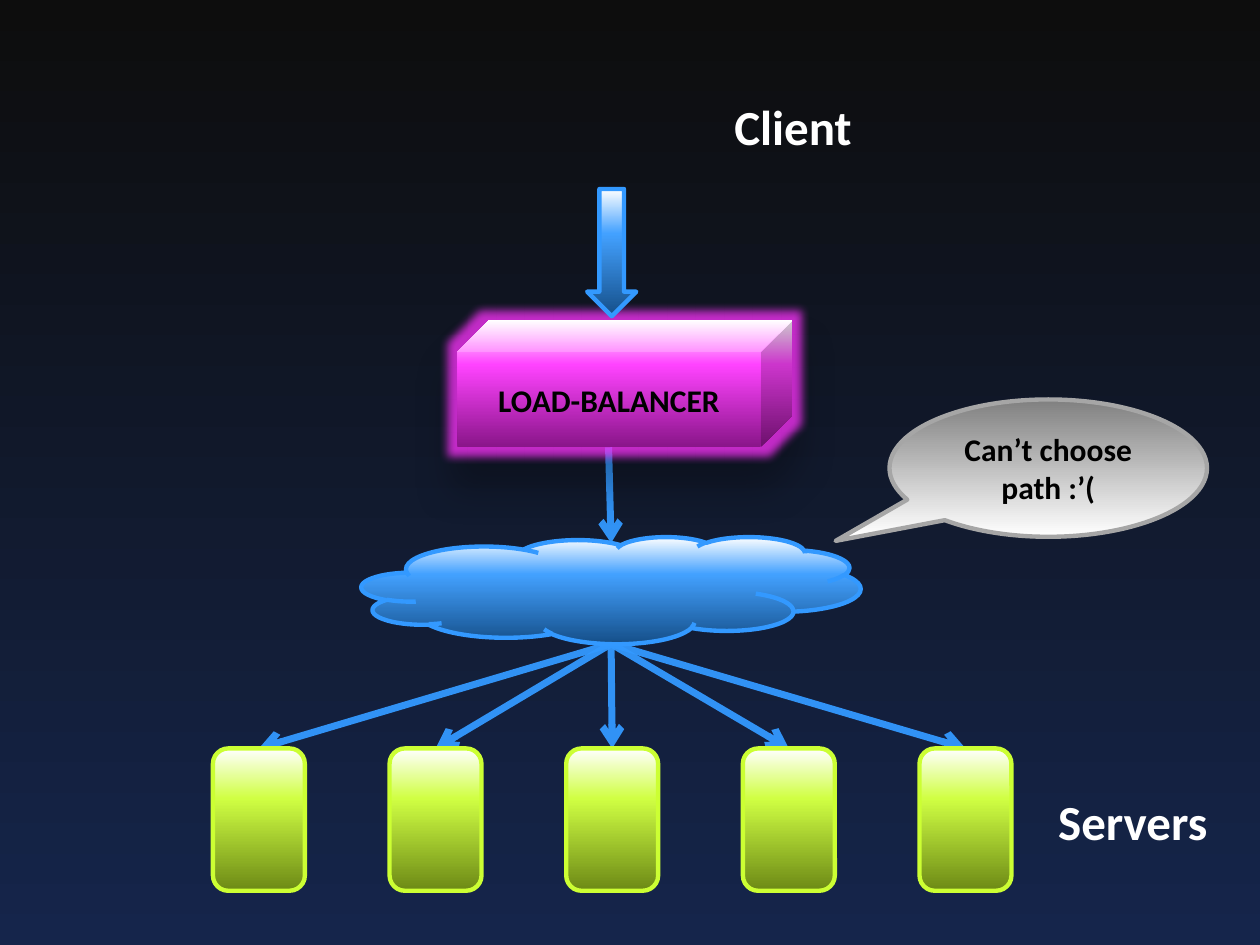
from dataclasses import dataclass

from lxml.etree import SubElement
from pptx import Presentation
from pptx.dml.color import RGBColor
from pptx.enum.shapes import MSO_CONNECTOR, MSO_SHAPE
from pptx.enum.text import MSO_ANCHOR, MSO_AUTO_SIZE, PP_ALIGN
from pptx.oxml.ns import qn
from pptx.util import Inches, Pt

COLUMN = ROW = Inches(0.1)
SERVER_COUNT = 5
SERVER_LEFT, SERVER_TOP, SERVER_WIDTH, SERVER_HEIGHT = 16.9, 59.4, 7.3, 11.3
SERVER_PITCH = 14.02


@dataclass(frozen=True)
class Theme:
    """Hold the colours, font and sizes of the slide."""

    font: str = "Calibri"
    label_size: int = 28
    shape_text_size: int = 18
    outline_width: float = 2.5
    arrow_width: float = 4
    light: str = "FFFFFF"
    dark: str = "000000"
    blue_line: str = "3399FF"
    green_line: str = "CCFF33"
    grey_line: str = "A6A6A6"
    glow: str = "FF33FF"
    night: tuple = ((0, "0D0D0D"), (100, "15254B"))
    blue: tuple = ((0, "154F89"), (65, "43A1FF"), (100, "FFFFFF"))
    pink: tuple = ((0, "891589"), (65, "FF43FF"), (100, "FFFFFF"))
    green: tuple = ((0, "6C8915"), (65, "D0FF43"), (100, "FFFFFF"))
    grey: tuple = ((0, "FFFFFF"), (100, "808080"))


THEME = Theme()


def place(left, top, width, height):
    """Turn grid columns and rows into slide lengths."""
    return (round(left * COLUMN), round(top * ROW),
            round(width * COLUMN), round(height * ROW))


def add_color(parent, color, alpha=100):
    """Append a colour element with its opacity in percent."""
    element = SubElement(parent, qn("a:srgbClr"), val=color)
    if alpha < 100:
        SubElement(element, qn("a:alpha"), val=str(alpha * 1000))


def paint_gradient(fill, owner, stops, angle):
    """Fill with a linear gradient at a counter-clockwise angle."""
    fill.gradient()
    fill.gradient_angle = angle
    stop_list = next(owner.iter(qn("a:gsLst")))
    stop_list.clear()
    for position, color in stops:
        stop = SubElement(stop_list, qn("a:gs"), pos=str(position * 1000))
        add_color(stop, color)


def add_run(paragraph, text, size, color):
    """Add one bold run."""
    run = paragraph.add_run()
    run.text = text
    run.font.name = THEME.font
    run.font.size = Pt(size)
    run.font.bold = True
    run.font.color.rgb = RGBColor.from_string(color)


def add_block(slide, kind, area, stops, line=None, text=None):
    """Add a gradient shape with an optional outline and centred text."""
    shape = slide.shapes.add_shape(kind, *place(*area))
    shape.shadow.inherit = False
    paint_gradient(shape.fill, shape.element, stops, 90)
    if line:
        shape.line.color.rgb = RGBColor.from_string(line)
        shape.line.width = Pt(THEME.outline_width)
    else:
        shape.line.fill.background()
    if text:
        frame = shape.text_frame
        frame.word_wrap = True
        frame.vertical_anchor = MSO_ANCHOR.MIDDLE
        frame.paragraphs[0].alignment = PP_ALIGN.CENTER
        add_run(frame.paragraphs[0], text, THEME.shape_text_size, THEME.dark)
    return shape


def add_glow_and_shadow(shape):
    """Give a shape a coloured glow and a soft shadow below it."""
    effects = shape.element.spPr.find(qn("a:effectLst"))
    glow = SubElement(effects, qn("a:glow"), rad=str(Pt(10)))
    add_color(glow, THEME.glow, 75)
    shadow = SubElement(effects, qn("a:outerShdw"), blurRad=str(Pt(20)),
                        dist=str(Pt(20)), dir="5400000", rotWithShape="0")
    add_color(shadow, THEME.dark, 25)


def add_arrow(slide, start, end):
    """Add a straight arrow between two grid points."""
    connector = slide.shapes.add_connector(
        MSO_CONNECTOR.STRAIGHT, *place(*start, *end))
    connector.line.color.rgb = RGBColor.from_string(THEME.blue_line)
    connector.line.width = Pt(THEME.arrow_width)
    properties = connector.element.spPr
    color = next(properties.iter(qn("a:srgbClr")))
    SubElement(color, qn("a:alpha"), val="95000")
    SubElement(properties.find(qn("a:ln")), qn("a:tailEnd"), type="arrow")
    SubElement(properties, qn("a:effectLst"))


def add_label(slide, area, text):
    """Add a large label that does not wrap."""
    frame = slide.shapes.add_textbox(*place(*area)).text_frame
    frame.word_wrap = False
    frame.auto_size = MSO_AUTO_SIZE.SHAPE_TO_FIT_TEXT
    add_run(frame.paragraphs[0], text, THEME.label_size, THEME.light)


def add_callout(slide):
    """Add the speech bubble pointing at the cloud."""
    callout = add_block(slide, MSO_SHAPE.OVAL_CALLOUT, (70.6, 31.7, 25.2, 10.9),
                        THEME.grey, THEME.grey_line, "Can’t choose path :’(")
    callout.adjustments[0] = -0.67
    callout.adjustments[1] = 0.53


def main():
    """Build the load-balancing slide."""
    presentation = Presentation()
    presentation.slide_width = 100 * COLUMN
    presentation.slide_height = 75 * ROW
    slide = presentation.slides.add_slide(presentation.slide_layouts[6])
    paint_gradient(slide.background.fill, slide.element, THEME.night, 270)

    server_lefts = [SERVER_LEFT + SERVER_PITCH * index
                    for index in range(SERVER_COUNT)]
    add_callout(slide)
    add_arrow(slide, (48.3, 35.5), (48.5, 43.1))
    for left in server_lefts:
        add_arrow(slide, (48.5, 51.1), (left + SERVER_WIDTH / 2, SERVER_TOP))
    add_block(slide, MSO_SHAPE.CLOUD, (28.7, 42.6, 39.6, 8.5),
              THEME.blue, THEME.blue_line)
    balancer = add_block(slide, MSO_SHAPE.CUBE, (36.3, 25.4, 26.6, 10.1),
                         THEME.pink, text="LOAD-BALANCER")
    add_glow_and_shadow(balancer)
    for left in server_lefts:
        add_block(slide, MSO_SHAPE.ROUNDED_RECTANGLE,
                  (left, SERVER_TOP, SERVER_WIDTH, SERVER_HEIGHT),
                  THEME.green, THEME.green_line)
    add_block(slide, MSO_SHAPE.DOWN_ARROW, (46.6, 15, 3.9, 10.1),
              THEME.blue, THEME.blue_line)
    add_label(slide, (57.3, 7.2, 12, 5.7), "Client")
    add_label(slide, (83, 62.3, 14.7, 5.7), "Servers")
    presentation.save("out.pptx")


if __name__ == "__main__":
    main()
